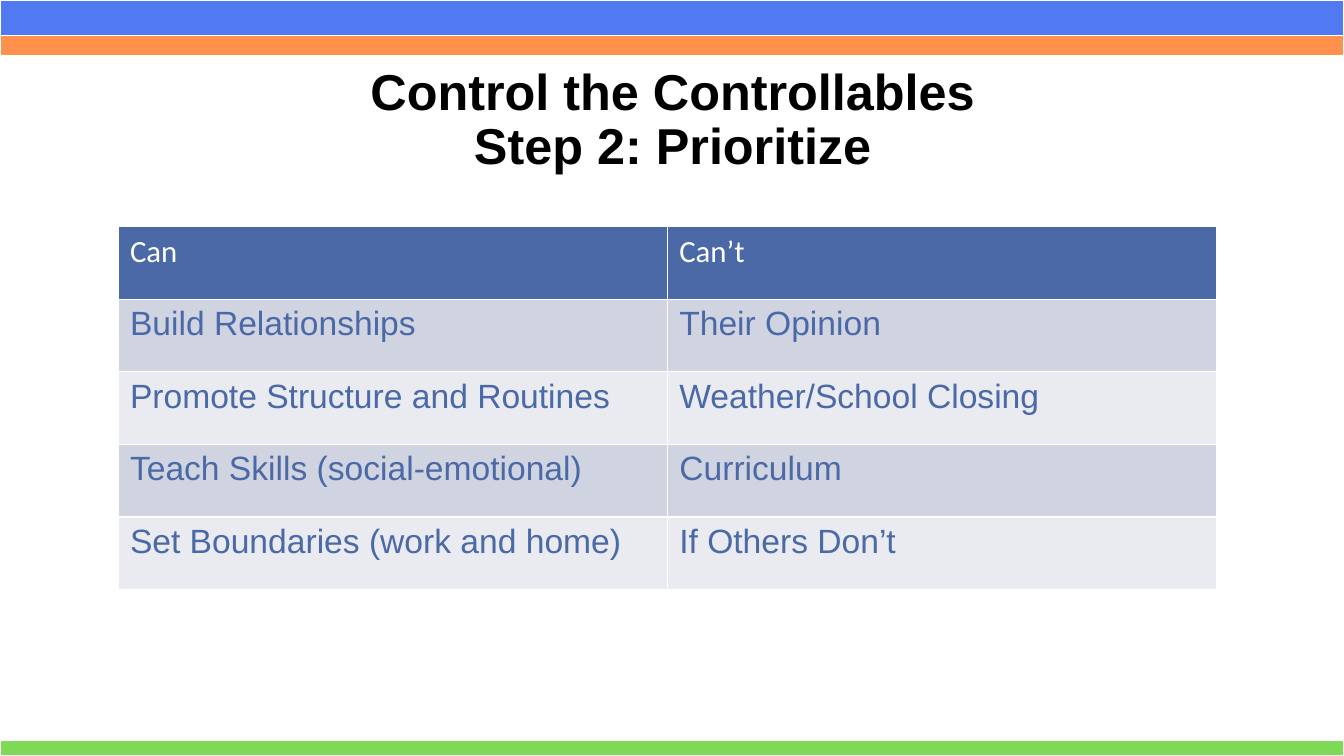
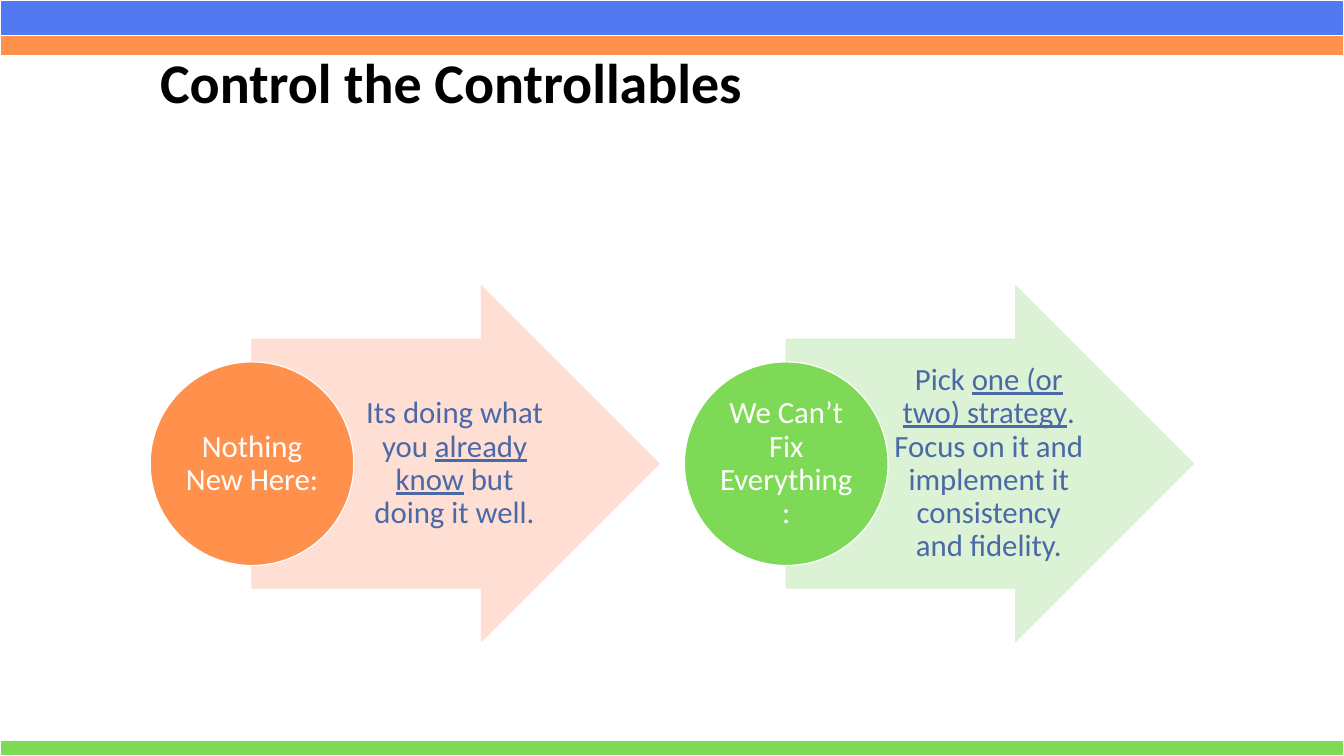
from lxml import etree
from pptx import Presentation
from pptx.dml.color import RGBColor
from pptx.enum import shapes, text
from pptx.oxml import ns
from pptx.util import Pt

BLUE, ORANGE, GREEN = "5079F2", "FF914D", "7ED957"
INK, WHITE, BLACK = "4B69A6", "FFFFFF", "000000"
ROWS = ["D0D4E1", "E9EBF1"]
PEACH, MINT = "FFDCD0", "D8F1D1"
SHAPE = shapes.MSO_SHAPE
ALIGN = text.PP_ALIGN
ANCHOR = text.MSO_ANCHOR


def rgb(code):
    return RGBColor.from_string(code)


class Deck:
    wide, high = 960, 540

    def __init__(self):
        self.prs = Presentation()
        self.prs.slide_width = Pt(self.wide)
        self.prs.slide_height = Pt(self.high)
        self.slide = None

    def start(self):
        """Add a blank slide with the shared bands."""
        self.slide = self.prs.slides.add_slide(self.prs.slide_layouts[6])
        for top, high, hue in [(0, 25.2, BLUE), (25.2, 14.4, ORANGE),
                               (529.2, 10.8, GREEN)]:
            self.shape(SHAPE.RECTANGLE, (0, top, self.wide, high), hue)

    def shape(self, kind, box, fill, line=WHITE, alpha=None):
        item = self.slide.shapes.add_shape(kind, *map(Pt, box))
        item.shadow.inherit = False
        item.fill.solid()
        item.fill.fore_color.rgb = rgb(fill)
        item.line.color.rgb = rgb(line)
        item.line.width = Pt(0.85)
        if alpha:
            for hue in item._element.spPr.iter(ns.qn("a:srgbClr")):
                etree.SubElement(hue, ns.qn("a:alpha"), val=str(alpha * 1000))
        return item

    def font(self, para, size, name, hue, bold=False):
        for run in para.runs:
            run.font.size = Pt(size)
            run.font.name = name
            run.font.bold = bold
            run.font.color.rgb = rgb(hue)

    def pad(self, item, left, top, right, low):
        item.margin_left, item.margin_top = Pt(left), Pt(top)
        item.margin_right, item.margin_bottom = Pt(right), Pt(low)

    def box(self, place):
        return self.slide.shapes.add_textbox(*map(Pt, place))

    def title(self, words, place, size, name, align):
        frame = self.box(place).text_frame
        frame.word_wrap = True
        frame.vertical_anchor = ANCHOR.BOTTOM
        frame.text = words
        para = frame.paragraphs[0]
        para.alignment = align
        para.line_spacing = 0.9
        self.font(para, size, name, BLACK, True)

    def label(self, item, parts, hue, pad):
        """Centre the parts in an item, with every second part underlined."""
        frame = item.text_frame
        frame.word_wrap = True
        frame.vertical_anchor = ANCHOR.MIDDLE
        self.pad(frame, *pad)
        para = frame.paragraphs[0]
        para.alignment = ALIGN.CENTER
        para.line_spacing = 0.9
        for i, part in enumerate(parts):
            run = para.add_run()
            run.text = part
            run.font.underline = i % 2 == 1
        self.font(para, 22, "Calibri", hue)

    def table(self, rows, place):
        grid = self.slide.shapes.add_table(
            len(rows), len(rows[0]), *map(Pt, place)).table
        for r, row in enumerate(rows):
            for c, words in enumerate(row):
                cell = grid.cell(r, c)
                cell.text = words
                self.pad(cell, 8.64, 4.32, 8.64, 4.32)
                cell.fill.solid()
                cell.fill.fore_color.rgb = rgb(ROWS[(r - 1) % 2] if r else INK)
                style = (24, "Arial", INK) if r else (22, "Calibri", WHITE)
                self.font(cell.text_frame.paragraphs[0], *style)

    def step(self, left, name, parts, hue, tint):
        """Draw a named circle over the tail of an arrow."""
        disc, mid = 145.44, 331.2
        tail = left + disc / 2
        arrow = self.shape(SHAPE.RIGHT_ARROW,
                           (tail, mid - 127, 290.88, 254), tint, tint, 90)
        arrow.adjustments[0] = 0.7
        arrow.adjustments[1] = 0.5
        body = self.box((left + disc, mid - 89, 141.84, 178))
        self.label(body, parts, INK, (4.32, 1.44, 2.16, 1.44))
        ball = self.shape(SHAPE.OVAL, (left, mid - disc / 2, disc, disc), hue)
        self.label(ball, [name], WHITE, [1.44] * 4)


def main():
    deck = Deck()

    deck.start()
    deck.title("Control the Controllables\vStep 2: Prioritize",
               (66.24, 42, 828.72, 87), 36, "Arial", ALIGN.CENTER)
    deck.table([
        ("Can", "Can’t"),
        ("Build Relationships", "Their Opinion"),
        ("Promote Structure and Routines", "Weather/School Closing"),
        ("Teach Skills (social-emotional)", "Curriculum"),
        ("Set Boundaries (work and home)", "If Others Don’t"),
    ], (84.24, 162, 784.8, 259.2))

    deck.start()
    deck.title("Control the Controllables", (107.28, 34, 745.2, 52),
               40, "Calibri", ALIGN.LEFT)
    steps = [
        ("Nothing New Here:",
         ["Its doing what you ", "already know", " but doing it well."],
         ORANGE, PEACH),
        ("We Can’t Fix Everything:",
         ["Pick ", "one (or two) strategy",
          ". Focus on it and implement it consistency and fidelity."],
         GREEN, MINT),
    ]
    for i, step in enumerate(steps):
        deck.step(107.28 + i * 381.6, *step)

    deck.prs.save("out.pptx")


if __name__ == "__main__":
    main()
